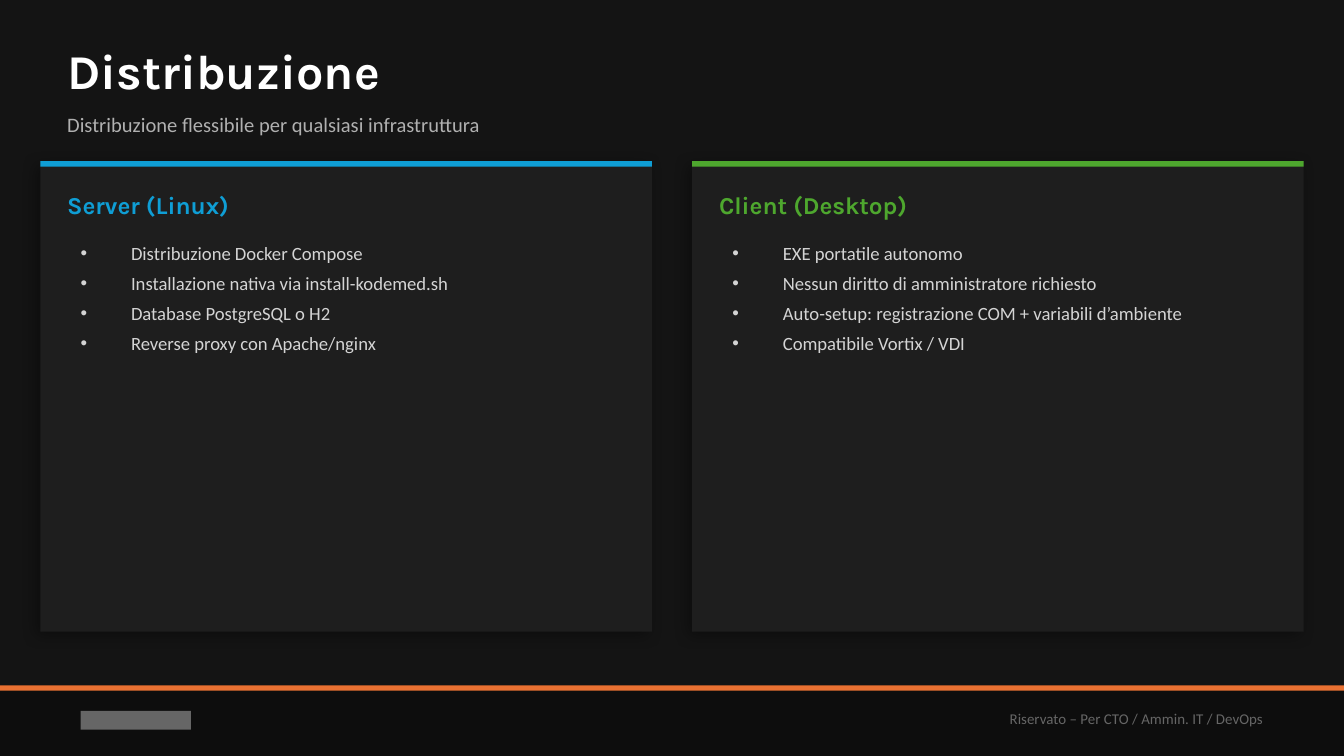
"""Build the "Distribuzione" slide: a server card and a client card above a footer."""
from pptx import Presentation, util as u
from pptx.dml.color import RGBColor
from pptx.enum import shapes, text
from pptx.oxml import parse_xml
from pptx.oxml.ns import nsdecls, qn

PX = u.Inches(1) // 200
COLORS = {
    "background": "141414", "footer": "0D0D0D", "card": "1E1E1E",
    "orange": "E97132", "blue": "0F9ED5", "green": "4EA72E",
    "white": "FFFFFF", "subtitle": "B0B0B0", "body": "D4D4D4", "muted": "666666",
}
CARDS = [
    ("Server (Linux)", "blue", [
        "Distribuzione Docker Compose",
        "Installazione nativa via install-kodemed.sh",
        "Database PostgreSQL o H2",
        "Reverse proxy con Apache/nginx",
    ]),
    ("Client (Desktop)", "green", [
        "EXE portatile autonomo",
        "Nessun diritto di amministratore richiesto",
        "Auto-setup: registrazione COM + variabili d’ambiente",
        "Compatibile Vortix / VDI",
    ]),
]
CARD_LEFT, CARD_TOP, CARD_WIDTH, CARD_HEIGHT, CARD_STEP = 60, 240, 910, 700, 970
SHADOW = (
    f'<a:outerShdw {nsdecls("a")} blurRad="{u.Pt(8)}" dist="{u.Pt(3)}" dir="8100000" '
    'algn="bl" rotWithShape="0"><a:srgbClr val="000000"><a:alpha val="35000"/>'
    '</a:srgbClr></a:outerShdw>'
)


def place(shape, box, inset=0, anchor=text.MSO_ANCHOR.MIDDLE):
    """Position a text shape, set up its frame and return its first paragraph."""
    shape.left, shape.top, shape.width, shape.height = [value * PX for value in box]
    frame = shape.text_frame
    frame.word_wrap = True
    frame.auto_size = text.MSO_AUTO_SIZE.NONE
    frame.vertical_anchor = anchor
    frame.margin_left = frame.margin_right = inset * PX
    frame.margin_top = frame.margin_bottom = inset * PX // 2
    return frame.paragraphs[0]


def write(paragraph, content, size, color, font="Calibri", bold=False,
          align=text.PP_ALIGN.LEFT):
    """Add a formatted run to a paragraph."""
    paragraph.alignment = align
    run = paragraph.add_run()
    run.text = content
    run.font.size = u.Pt(size)
    run.font.name = font
    run.font.bold = bold
    run.font.color.rgb = RGBColor.from_string(COLORS[color])


presentation = Presentation()
presentation.slide_width, presentation.slide_height = 2000 * PX, 1125 * PX
slide = presentation.slides.add_slide(presentation.slide_layouts.get_by_name("Two Content"))
slide.background.fill.solid()
slide.background.fill.fore_color.rgb = RGBColor.from_string(COLORS["background"])
title, *bodies = slide.placeholders

rectangles = [((0, 1020, 2000, 105), "footer"), ((0, 1020, 2000, 8), "orange"),
              ((120, 1058, 164, 28), "muted")]
for index, (heading, accent, items) in enumerate(CARDS):
    left = CARD_LEFT + index * CARD_STEP
    rectangles += [((left, CARD_TOP, CARD_WIDTH, CARD_HEIGHT), "card"),
                   ((left, CARD_TOP, CARD_WIDTH, 8), accent)]

for box, color in rectangles:
    rectangle = slide.shapes.add_shape(
        shapes.MSO_SHAPE.RECTANGLE, *[value * PX for value in box])
    rectangle.shadow.inherit = False
    rectangle.fill.solid()
    rectangle.fill.fore_color.rgb = RGBColor.from_string(COLORS[color])
    rectangle.line.fill.background()
    if color == "card":
        rectangle._element.spPr.find(qn("a:effectLst")).append(parse_xml(SHADOW))

notice = place(slide.shapes.add_textbox(0, 0, 0, 0), (1100, 1030, 800, 80), inset=20)
write(notice, "Riservato – Per CTO / Ammin. IT / DevOps", 8, "muted",
      align=text.PP_ALIGN.RIGHT)

write(place(title, (100, 50, 1800, 110)), "Distribuzione", 26, "white",
      font="Karla", bold=True)
subtitle = place(slide.shapes.add_textbox(0, 0, 0, 0), (100, 150, 1800, 70))
write(subtitle, "Distribuzione flessibile per qualsiasi infrastruttura", 11, "subtitle")

for index, (body, (heading, accent, items)) in enumerate(zip(bodies, CARDS)):
    left = CARD_LEFT + index * CARD_STEP + 40
    heading_box = slide.shapes.add_textbox(0, 0, 0, 0)
    write(place(heading_box, (left, 270, 830, 70)), heading, 13, accent,
          font="Karla", bold=True)

    slide.shapes._spTree.append(body._element)
    paragraph = place(body, (left, 350, 830, 560), inset=20, anchor=text.MSO_ANCHOR.TOP)
    for number, item in enumerate(items):
        if number:
            paragraph = body.text_frame.add_paragraph()
        properties = paragraph._p.get_or_add_pPr()
        properties.set("marL", str(75 * PX))
        properties.set("indent", str(-75 * PX))
        properties.append(parse_xml(f'<a:buChar {nsdecls("a")} char="•"/>'))
        paragraph.space_before, paragraph.space_after = u.Pt(0), u.Pt(4)
        write(paragraph, item, 10, "body")

presentation.save("out.pptx")
